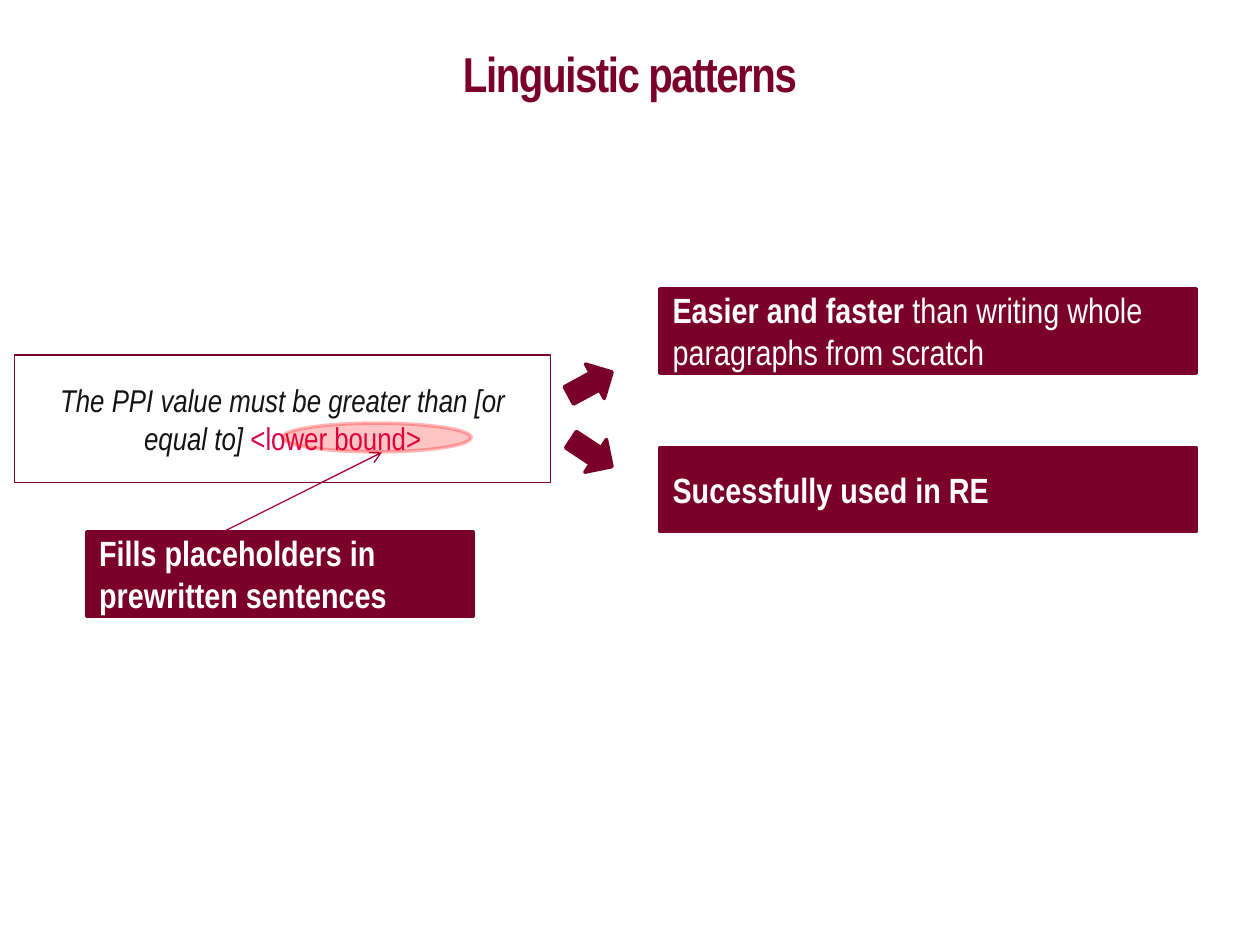
from dataclasses import dataclass
from typing import Optional

from lxml.etree import SubElement
from pptx import Presentation
from pptx.dml.color import RGBColor
from pptx.enum.shapes import MSO_CONNECTOR, MSO_SHAPE
from pptx.enum.text import MSO_ANCHOR, PP_ALIGN
from pptx.oxml.ns import qn
from pptx.util import Cm, Pt

COLORS = {
    "maroon": "7A0029",
    "pointer": "A4003A",
    "placeholder": "DA004E",
    "ink": "141414",
    "white": "FFFFFF",
    "highlight": "FF0000",
}
FONT = "Arial Narrow"


@dataclass(frozen=True)
class Phrase:
    text: str
    size: float
    color: str
    bold: bool = False
    italic: bool = False
    spacing: Optional[float] = None


@dataclass(frozen=True)
class Figure:
    preset: MSO_SHAPE
    left: float
    top: float
    width: float
    height: float
    fill: Optional[str] = "maroon"
    line: str = "maroon"
    line_width: float = 2
    fill_alpha: Optional[int] = None
    line_alpha: Optional[int] = None
    rotation: float = 0
    phrases: tuple[Phrase, ...] = ()
    align: PP_ALIGN = PP_ALIGN.LEFT


def rgb(name: str) -> RGBColor:
    return RGBColor.from_string(COLORS[name])


def set_alpha(fill_parent, percent: Optional[int]) -> None:
    if percent is not None:
        color = fill_parent.find(qn("a:solidFill"))[0]
        SubElement(color, qn("a:alpha")).set("val", str(percent * 1000))


def write_phrases(frame, phrases: tuple[Phrase, ...], align: PP_ALIGN) -> None:
    frame.word_wrap = True
    paragraph = frame.paragraphs[0]
    paragraph.alignment = align
    for phrase in phrases:
        run = paragraph.add_run()
        run.text = phrase.text
        run.font.name = FONT
        run.font.size = Pt(phrase.size)
        run.font.bold = phrase.bold
        run.font.italic = phrase.italic
        run.font.color.rgb = rgb(phrase.color)
        if phrase.spacing is not None:
            run.font._element.set("spc", str(round(phrase.spacing * 100)))


def draw_figure(slide, figure: Figure) -> None:
    shape = slide.shapes.add_shape(
        figure.preset, Cm(figure.left), Cm(figure.top), Cm(figure.width), Cm(figure.height)
    )
    shape.shadow.inherit = False
    shape.rotation = figure.rotation
    if figure.fill:
        shape.fill.solid()
        shape.fill.fore_color.rgb = rgb(figure.fill)
        set_alpha(shape._element.spPr, figure.fill_alpha)
    else:
        shape.fill.background()
    shape.line.color.rgb = rgb(figure.line)
    shape.line.width = Pt(figure.line_width)
    outline = shape._element.spPr.find(qn("a:ln"))
    set_alpha(outline, figure.line_alpha)
    SubElement(outline, qn("a:round"))
    if figure.phrases:
        shape.text_frame.vertical_anchor = MSO_ANCHOR.MIDDLE
        write_phrases(shape.text_frame, figure.phrases, figure.align)


def draw_title(slide, phrase: Phrase) -> None:
    title = slide.shapes.add_textbox(Cm(0), Cm(0.76), Cm(25.4), Cm(1.22))
    write_phrases(title.text_frame, (phrase,), PP_ALIGN.CENTER)


def draw_pointer(slide, start: tuple[float, float], end: tuple[float, float]) -> None:
    pointer = slide.shapes.add_connector(
        MSO_CONNECTOR.STRAIGHT, Cm(start[0]), Cm(start[1]), Cm(end[0]), Cm(end[1])
    )
    pointer.line.color.rgb = rgb("pointer")
    pointer.line.width = Pt(0.75)
    properties = pointer._element.spPr
    SubElement(properties.find(qn("a:ln")), qn("a:tailEnd")).set("type", "arrow")
    SubElement(properties, qn("a:effectLst"))


def banner(left: float, top: float, width: float, *phrases: Phrase) -> Figure:
    return Figure(MSO_SHAPE.RECTANGLE, left, top, width, 1.7, phrases=phrases)


def block_arrow(left: float, top: float, rotation: float) -> Figure:
    return Figure(MSO_SHAPE.DOWN_ARROW, left, top, 0.79, 0.99, rotation=rotation)


PATTERN = Figure(
    MSO_SHAPE.RECTANGLE, 0.3, 7.16, 10.8, 2.57,
    fill=None,
    line_width=0.75,
    phrases=(
        Phrase("The PPI value must be greater than [or equal to] ", 18, "ink", italic=True),
        Phrase("<lower bound>", 18, "placeholder"),
    ),
    align=PP_ALIGN.CENTER,
)
BENEFITS = (
    banner(
        13.31, 5.82, 10.8,
        Phrase("Easier and faster ", 20, "white", bold=True),
        Phrase("than writing whole paragraphs from scratch", 20, "white"),
    ),
    banner(1.75, 10.72, 7.8,
           Phrase("Fills placeholders in prewritten sentences", 20, "white", bold=True)),
    block_arrow(11.51, 7.24, 241.5),
    block_arrow(11.53, 8.64, 303.4),
    banner(13.31, 9.02, 10.8, Phrase("Sucessfully used in RE", 20, "white", bold=True)),
)
HIGHLIGHT = Figure(
    MSO_SHAPE.OVAL, 5.69, 8.53, 3.81, 0.58,
    fill="highlight", line="highlight", fill_alpha=23, line_alpha=27,
)


def main() -> None:
    presentation = Presentation()
    presentation.slide_width = Cm(25.4)
    presentation.slide_height = Cm(19.05)
    slide = presentation.slides.add_slide(presentation.slide_layouts[6])
    draw_figure(slide, PATTERN)
    draw_title(slide, Phrase("Linguistic patterns", 28, "maroon", bold=True, spacing=-0.8))
    for benefit in BENEFITS:
        draw_figure(slide, benefit)
    draw_pointer(slide, (4.5, 10.72), (7.7, 9.12))
    draw_figure(slide, HIGHLIGHT)
    presentation.save("out.pptx")


if __name__ == "__main__":
    main()
